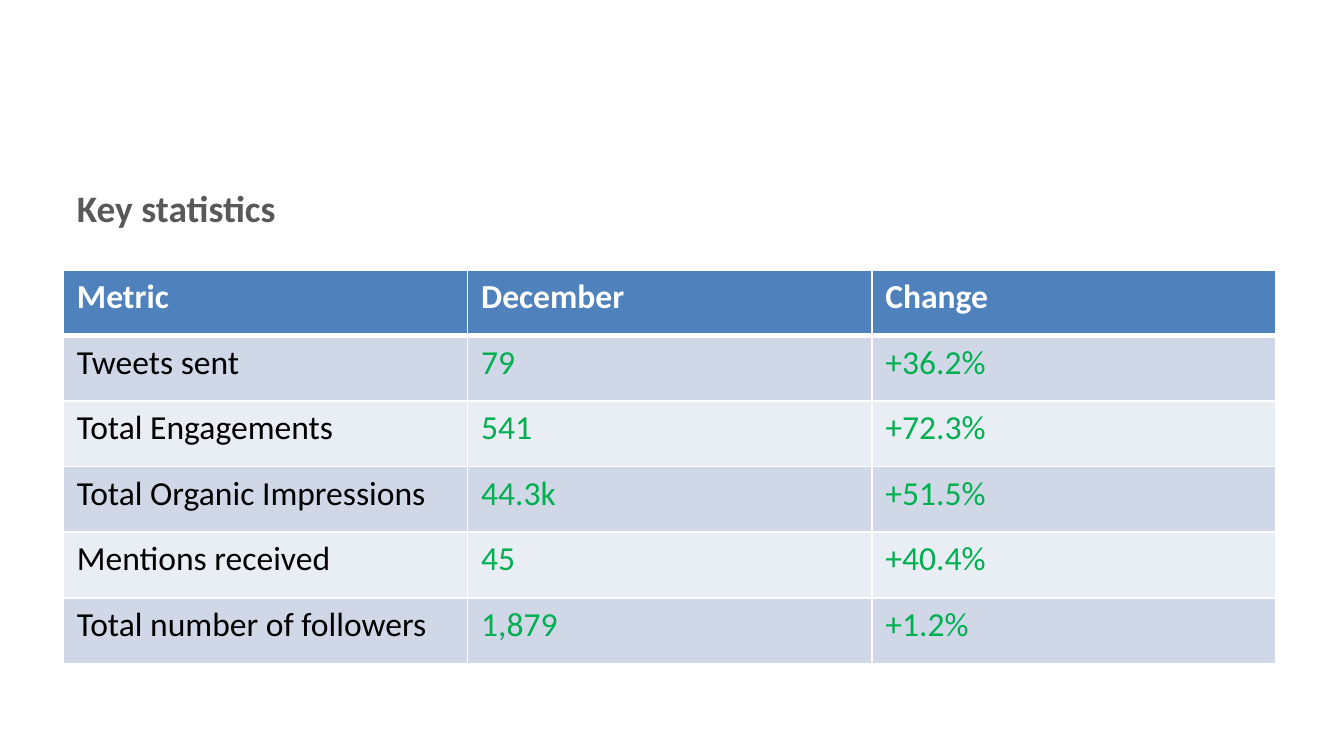
from lxml.etree import SubElement
from pptx import Presentation
from pptx.dml.color import RGBColor
from pptx.enum.text import MSO_ANCHOR, MSO_AUTO_SIZE
from pptx.oxml.ns import qn
from pptx.util import Cm, Pt

HEADING = "Key statistics"
ROWS = [
    ("Metric", "December", "Change"),
    ("Tweets sent", "79", "+36.2%"),
    ("Total Engagements", "541", "+72.3%"),
    ("Total Organic Impressions", "44.3k", "+51.5%"),
    ("Mentions received", "45", "+40.4%"),
    ("Total number of followers", "1,879", "+1.2%"),
]
LEFT, TABLE_TOP = 1.2, 5.1
COL_WIDTH, ROW_HEIGHT = 7.64, 1.24
HEADER_FILL, BANDS = "4F81BD", ("D0D8E8", "E9EDF4")
WHITE, BLACK, GREEN, GREY = "FFFFFF", "000000", "00B050", "595959"


def rgb(value):
    return RGBColor.from_string(value)


def write(tf, text, size, color, bold):
    p = tf.paragraphs[0]
    r = p.add_run()
    r.text = text
    for name, value in {"name": "Calibri", "size": Pt(size), "bold": bold}.items():
        setattr(r.font, name, value)
    r.font.color.rgb = rgb(color)
    return p


def set_borders(cell, widths):
    """Draw white cell borders; widths maps a side (L, R, T, B) to points."""
    tcPr = cell._tc.get_or_add_tcPr()
    for side, width in widths.items():
        ln = SubElement(tcPr, qn(f"a:ln{side}"), w=str(Pt(width)))
        fill = SubElement(ln, qn("a:solidFill"))
        SubElement(fill, qn("a:srgbClr"), val=WHITE)


def add_heading(s):
    sp = s.placeholders[1]
    sp.left, sp.top, sp.width, sp.height = Cm(LEFT), Cm(3.38), Cm(16.76), Cm(1.7)
    tf = sp.text_frame
    tf.word_wrap = True
    tf.auto_size = MSO_AUTO_SIZE.NONE
    tf.vertical_anchor = MSO_ANCHOR.TOP
    p = write(tf, HEADING, 20, GREY, True)
    p.space_before = Pt(0)
    pPr = p._p.get_or_add_pPr()
    pPr.set("marL", "0")
    pPr.set("indent", "0")
    SubElement(pPr, qn("a:buNone"))


def add_statistics(s):
    n_rows, n_cols = len(ROWS), len(ROWS[0])
    table = s.shapes.add_table(
        n_rows, n_cols, Cm(LEFT), Cm(TABLE_TOP),
        Cm(COL_WIDTH * n_cols), Cm(ROW_HEIGHT * n_rows)).table
    for i, row in enumerate(ROWS):
        header = i == 0
        for j, text in enumerate(row):
            cell = table.cell(i, j)
            set_borders(cell, {"L": 1, "R": 1, "T": 3 if i == 1 else 1,
                               "B": 3 if header else 1})
            cell.fill.solid()
            cell.fill.fore_color.rgb = rgb(HEADER_FILL if header else BANDS[(i - 1) % 2])
            color = WHITE if header else GREEN if j else BLACK
            write(cell.text_frame, text, 18, color, header)


prs = Presentation()
prs.slide_width, prs.slide_height = Cm(25.4), Cm(14.29)
s = prs.slides.add_slide(prs.slide_layouts[1])
title = s.shapes.title._element
title.getparent().remove(title)
add_heading(s)
add_statistics(s)
prs.save("out.pptx")
